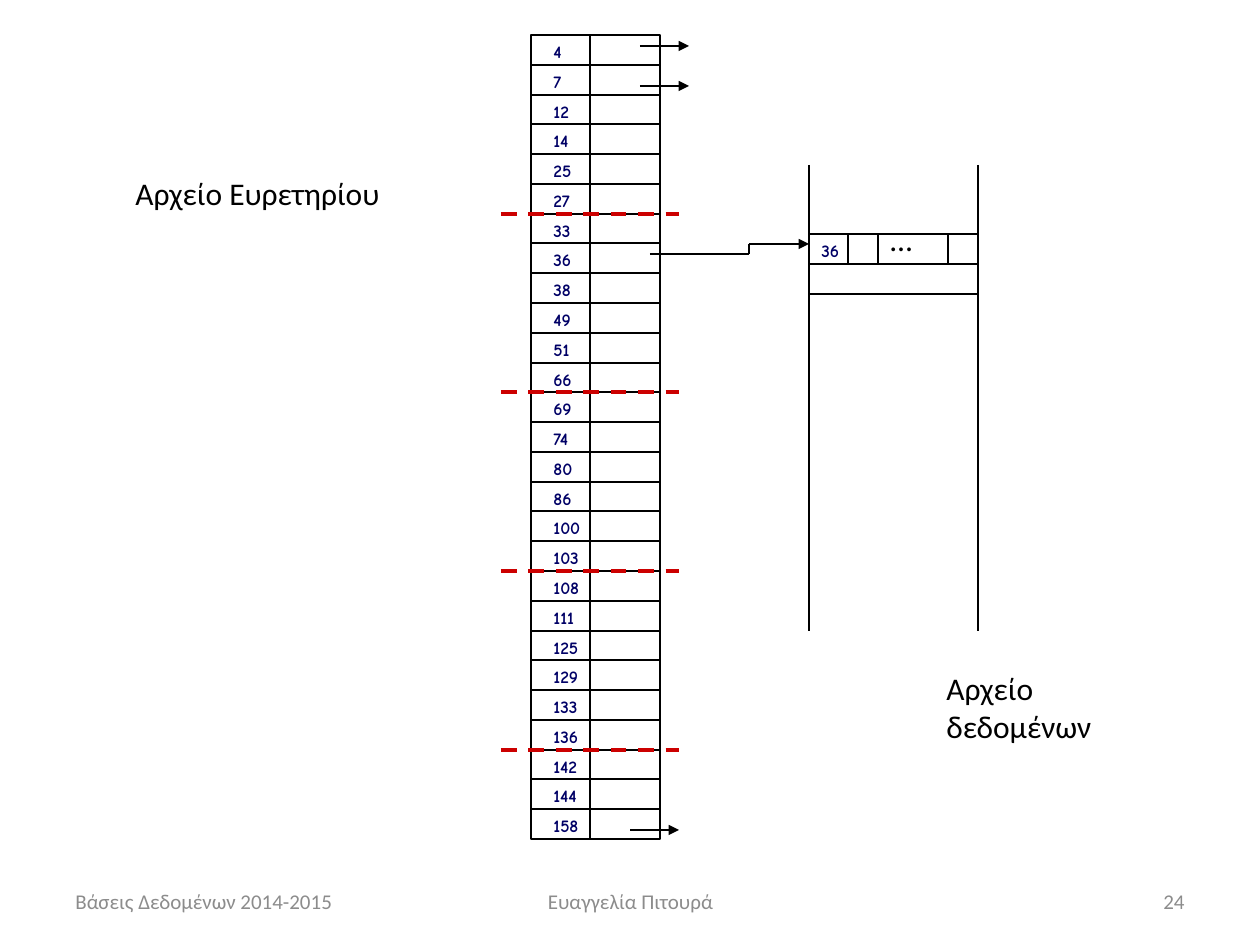
from dataclasses import dataclass
from itertools import pairwise

from lxml.etree import SubElement
from pptx import Presentation
from pptx.dml.color import RGBColor
from pptx.enum.dml import MSO_LINE
from pptx.enum.shapes import MSO_CONNECTOR, MSO_SHAPE
from pptx.enum.text import MSO_ANCHOR, MSO_AUTO_SIZE, PP_ALIGN
from pptx.oxml.ns import qn
from pptx.util import Emu, Pt

PX_PER_INCH = 126
BLACK, RED, NAVY, GREY = "000000", "CC0000", "000066", "8C8C8C"


def px(length: float) -> Emu:
    return Emu(round(length * 914400 / PX_PER_INCH))


def color(code: str) -> RGBColor:
    return RGBColor.from_string(code)


@dataclass(frozen=True)
class Line:
    x1: int
    y1: int
    x2: int
    y2: int
    color: str = BLACK
    width: float = 0.75
    dashed: bool = False
    arrow: bool = False


@dataclass(frozen=True)
class Label:
    text: str
    x: int
    y: int
    width: int
    height: int
    size: int = 18
    font: str = "Calibri"
    color: str = BLACK
    bold: bool = False
    align: PP_ALIGN = PP_ALIGN.LEFT
    anchor: MSO_ANCHOR = MSO_ANCHOR.TOP
    autosize: MSO_AUTO_SIZE = MSO_AUTO_SIZE.SHAPE_TO_FIT_TEXT


def draw_line(slide, line: Line) -> None:
    connector = slide.shapes.add_connector(
        MSO_CONNECTOR.STRAIGHT, px(line.x1), px(line.y1), px(line.x2), px(line.y2))
    connector.line.color.rgb = color(line.color)
    connector.line.width = Pt(line.width)
    if line.dashed:
        connector.line.dash_style = MSO_LINE.DASH
    if line.arrow:
        SubElement(connector.line._get_or_add_ln(), qn("a:tailEnd"), type="triangle")
    SubElement(connector._element.spPr, qn("a:effectLst"))


def draw_label(slide, label: Label) -> None:
    box = slide.shapes.add_textbox(
        px(label.x), px(label.y), px(label.width), px(label.height))
    frame = box.text_frame
    frame_format = {"word_wrap": True, "auto_size": label.autosize,
                    "vertical_anchor": label.anchor}
    for name, value in frame_format.items():
        setattr(frame, name, value)
    paragraph = frame.paragraphs[0]
    paragraph.alignment = label.align
    run = paragraph.add_run()
    run.text = label.text
    font_format = {"size": Pt(label.size), "name": label.font, "bold": label.bold}
    for name, value in font_format.items():
        setattr(run.font, name, value)
    run.font.color.rgb = color(label.color)


def draw_key(slide, key: int, x: int, y: int) -> None:
    draw_label(slide, Label(str(key), x, y, 59, 34, 10, "Comic Neue", NAVY, bold=True))


# Index file: blocks of three entries, a page break after every two blocks
KEYS = (4, 7, 12, 14, 25, 27, 33, 36, 38, 49, 51, 66, 69, 74, 80, 86, 100, 103,
        108, 111, 125, 129, 133, 136, 142, 144, 158)
ROWS_PER_BLOCK, ROWS_PER_PAGE = 3, 6
INDEX_LEFT, INDEX_DIVIDER, INDEX_RIGHT = 531, 590, 660
INDEX_TOP, INDEX_HEIGHT = 35, 804


def row_top(row: int) -> int:
    return INDEX_TOP + round(row * INDEX_HEIGHT / len(KEYS))


def draw_block(slide, first_row: int) -> None:
    top, bottom = row_top(first_row), row_top(first_row + ROWS_PER_BLOCK)
    block = slide.shapes.add_shape(
        MSO_SHAPE.RECTANGLE, px(INDEX_LEFT), px(top),
        px(INDEX_RIGHT - INDEX_LEFT), px(bottom - top))
    block.shadow.inherit = False
    block.fill.background()
    block.line.color.rgb = color(BLACK)
    block.line.width = Pt(0.75)
    for row in range(first_row + 1, first_row + ROWS_PER_BLOCK):
        draw_line(slide, Line(INDEX_LEFT, row_top(row), INDEX_RIGHT, row_top(row)))
    draw_line(slide, Line(INDEX_DIVIDER, top, INDEX_DIVIDER, bottom))


def draw_index(slide) -> None:
    for first_row in range(0, len(KEYS), ROWS_PER_BLOCK):
        draw_block(slide, first_row)
    for row in range(ROWS_PER_PAGE, len(KEYS), ROWS_PER_PAGE):
        draw_line(slide, Line(501, row_top(row), 679, row_top(row), RED, 2.25, dashed=True))
    for row, key in enumerate(KEYS):
        draw_key(slide, key, 541, row_top(row))
    # Pointers out of the first two entries and the last one
    for x, y in ((640, 46), (640, 86), (630, 830)):
        draw_line(slide, Line(x, y, x + 49, y, arrow=True))


# Data file: two open sides, with one record and its fields
DATA_LEFT, DATA_RIGHT = 809, 978
DATA_TOP, DATA_BOTTOM = 165, 631
RECORD_TOP, RECORD_HEIGHT = 234, 30
FIELD_DIVIDERS = (848, 878, 948)
POINTER = ((650, 254), (749, 254), (749, 244), (DATA_LEFT, 244))


def draw_data_file(slide) -> None:
    for x in (DATA_LEFT, DATA_RIGHT):
        draw_line(slide, Line(x, DATA_TOP, x, DATA_BOTTOM))
    for step in range(3):
        y = RECORD_TOP + step * RECORD_HEIGHT
        draw_line(slide, Line(DATA_LEFT, y, DATA_RIGHT, y))
    for x in FIELD_DIVIDERS:
        draw_line(slide, Line(x, RECORD_TOP, x, RECORD_TOP + RECORD_HEIGHT))
    draw_key(slide, 36, DATA_LEFT, RECORD_TOP)
    draw_label(slide, Label("…", 878, 214, 59, 54))
    # Stepped pointer from index entry 36 to its record
    for start, end in pairwise(POINTER):
        draw_line(slide, Line(*start, *end, arrow=end == POINTER[-1]))


CAPTIONS = (
    Label("Αρχείο Ευρετηρίου", 123, 168, 367, 50),
    Label("Αρχείο δεδομένων", 934, 663, 199, 88),
)
FOOTERS = (
    ("Βάσεις Δεδομένων 2014-2015", 63, 294, PP_ALIGN.LEFT),
    ("Ευαγγελία Πιτουρά", 431, 399, PP_ALIGN.CENTER),
    ("24", 903, 294, PP_ALIGN.RIGHT),
)


def main() -> None:
    presentation = Presentation()
    presentation.slide_width, presentation.slide_height = px(1260), px(945)
    slide = presentation.slides.add_slide(presentation.slide_layouts[6])
    draw_index(slide)
    draw_data_file(slide)
    for caption in CAPTIONS:
        draw_label(slide, caption)
    for text, x, width, align in FOOTERS:
        draw_label(slide, Label(text, x, 876, width, 50, 12, color=GREY, align=align,
                                anchor=MSO_ANCHOR.MIDDLE, autosize=MSO_AUTO_SIZE.NONE))
    presentation.save("out.pptx")


if __name__ == "__main__":
    main()
